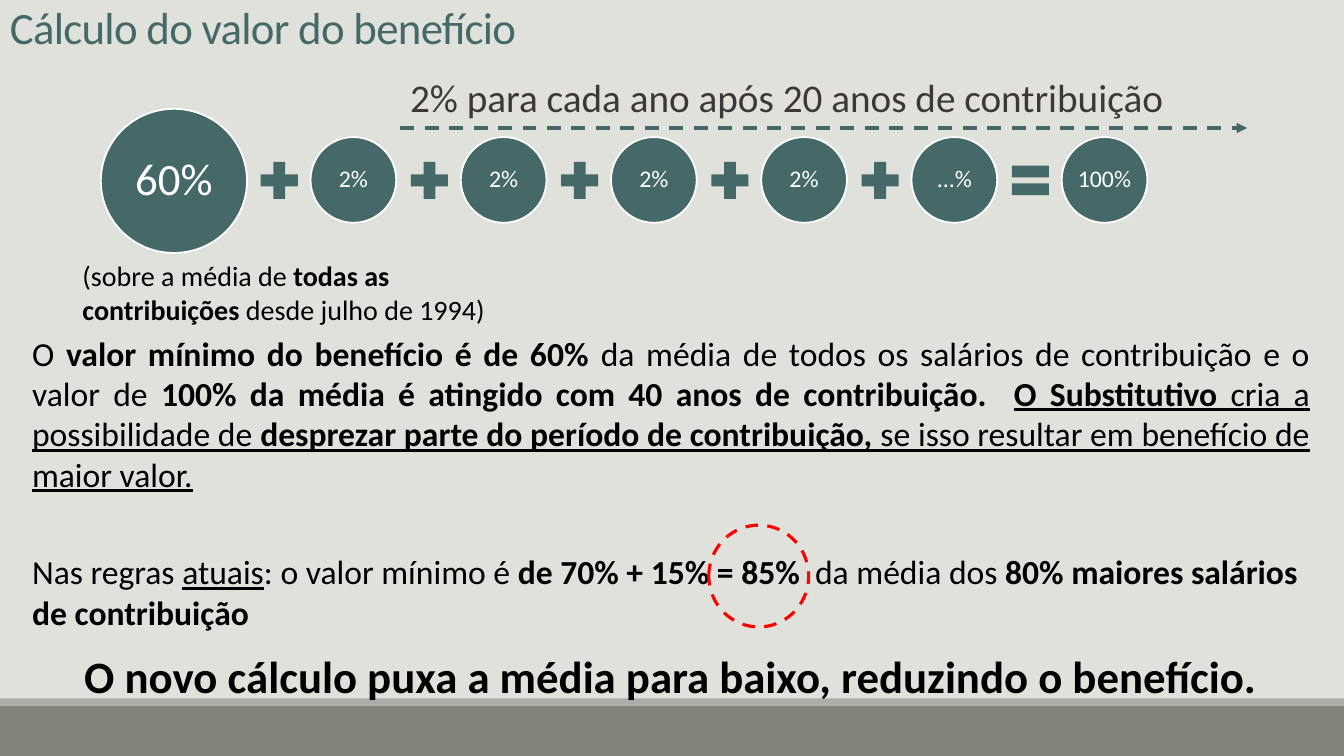
from lxml import etree
from pptx import Presentation
from pptx import util as u
from pptx.dml.color import RGBColor
from pptx.enum import dml, shapes, text
from pptx.oxml.ns import qn

EMU_PER_PX = 9144
FONT = "Calibri"
BACKGROUND = RGBColor(0xE1, 0xE1, 0xDB)
TEAL = RGBColor(0x45, 0x69, 0x68)
BROWN = RGBColor(0x3D, 0x37, 0x37)
FOOTER = RGBColor(0x82, 0x84, 0x7C)
FOOTER_EDGE = RGBColor(0xAC, 0xAD, 0xA8)
BLACK = RGBColor(0, 0, 0)
WHITE = RGBColor(0xFF, 0xFF, 0xFF)
RED = RGBColor(0xFF, 0, 0)
SHAPE = shapes.MSO_SHAPE
ALIGN = text.PP_ALIGN
ANCHOR = text.MSO_ANCHOR

AVERAGE_NOTE = [
    ("(sobre a média de ", {}),
    ("todas as contribuições ", {"bold": True}),
    ("desde julho de 1994)", {}),
]
NEW_RULE = [
    ("O ", {}),
    ("valor mínimo do benefício é de 60% ", {"bold": True}),
    ("da média de todos os salários de contribuição e o valor de ", {}),
    ("100% da média é atingido com 40 anos de contribuição.  ", {"bold": True}),
    ("O Substitutivo ", {"bold": True, "underline": True}),
    ("cria a possibilidade de ", {"underline": True}),
    ("desprezar parte do período de contribuição,", {"bold": True, "underline": True}),
    (" se isso resultar em benefício de maior valor.", {"underline": True}),
]
CURRENT_RULE = [
    ("Nas regras ", {}),
    ("atuais", {"underline": True}),
    (": o valor mínimo é ", {}),
    ("de 70% + 15% = 85%  ", {"bold": True}),
    ("da média dos ", {}),
    ("80% maiores salários de contribuição", {"bold": True}),
]
CONCLUSION = [
    ("O novo cálculo puxa a média para baixo, reduzindo o benefício.", {"bold": True}),
]


def px(*lengths):
    return [u.Emu(length * EMU_PER_PX) for length in lengths]


def set_values(target, values):
    for name, value in values.items():
        setattr(target, name, value)


def write_paragraph(paragraph, runs, size, color, **layout):
    set_values(paragraph, layout)
    for words, emphasis in runs:
        run = paragraph.add_run()
        run.text = words
        set_values(run.font, {"name": FONT, "size": u.Pt(size), **emphasis})
        run.font.color.rgb = color


def add_text_box(slide, box, anchor=ANCHOR.TOP):
    frame = slide.shapes.add_textbox(*px(*box)).text_frame
    set_values(frame, {"word_wrap": True, "vertical_anchor": anchor})
    return frame


def style_line(line, color, width, dash=None):
    line.color.rgb = color
    set_values(line, {"width": u.Pt(width), "dash_style": dash})


def add_shape(slide, kind, box, fill=None):
    shape = slide.shapes.add_shape(kind, *px(*box))
    shape.shadow.inherit = False
    if fill is None:
        shape.fill.background()
    else:
        shape.fill.solid()
        shape.fill.fore_color.rgb = fill
    shape.line.fill.background()
    return shape


def add_percent_circle(slide, box, label, size, inset):
    circle = add_shape(slide, SHAPE.OVAL, box, TEAL)
    style_line(circle.line, WHITE, 1.25)
    frame = circle.text_frame
    margins = ("margin_left", "margin_top", "margin_right", "margin_bottom")
    set_values(frame, dict.fromkeys(margins, px(inset)[0]))
    set_values(frame, {"word_wrap": True, "vertical_anchor": ANCHOR.MIDDLE})
    write_paragraph(frame.paragraphs[0], [(label, {})], size, WHITE,
                    alignment=ALIGN.CENTER, line_spacing=0.9)


def add_dashed_arrow(slide, start, end):
    arrow = slide.shapes.add_connector(shapes.MSO_CONNECTOR.STRAIGHT, *px(*start, *end))
    style_line(arrow.line, TEAL, 2.5, dml.MSO_LINE.DASH)
    etree.SubElement(arrow.line._get_or_add_ln(), qn("a:tailEnd"), type="triangle")
    etree.SubElement(arrow._element.spPr, qn("a:effectLst"))


def add_title(slide):
    paragraph = add_text_box(slide, (0, -15, 1250, 73), ANCHOR.BOTTOM).paragraphs[0]
    write_paragraph(paragraph, [("Cálculo do valor do benefício", {})], 32, TEAL,
                    line_spacing=0.85)
    paragraph.runs[0].font._element.set("spc", "-50")


def add_sum(slide):
    pitch = 149
    add_percent_circle(slide, (100, 108, 145, 143), "60%", 32, 4)
    for index, label in enumerate(["2%"] * 4 + ["...%", "100%"]):
        sign = SHAPE.MATH_EQUAL if label == "100%" else SHAPE.MATH_PLUS
        add_shape(slide, sign, (252 + index * pitch, 154, 50, 50), TEAL)
        add_percent_circle(slide, (308 + index * pitch, 136, 85, 85), label, 17, 2)


def add_rules(slide):
    frame = add_text_box(slide, (22, 325, 1287, 438))
    write_paragraph(frame.paragraphs[0], NEW_RULE, 24, BLACK, alignment=ALIGN.JUSTIFY)
    write_paragraph(frame.add_paragraph(), CURRENT_RULE, 24, BLACK,
                    space_before=u.Pt(41), space_after=u.Pt(12))
    write_paragraph(frame.add_paragraph(), CONCLUSION, 32, BLACK, alignment=ALIGN.CENTER)


def main():
    presentation = Presentation()
    width, height = px(1333, 750)
    set_values(presentation, {"slide_width": width, "slide_height": height})
    slide = presentation.slides.add_slide(presentation.slide_layouts[6])
    slide.background.fill.solid()
    slide.background.fill.fore_color.rgb = BACKGROUND

    add_shape(slide, SHAPE.RECTANGLE, (0, 700, 1333, 50), FOOTER)
    add_shape(slide, SHAPE.RECTANGLE, (0, 693, 1333, 7), FOOTER_EDGE)
    add_title(slide)
    heading = add_text_box(slide, (397, 68, 853, 57))
    write_paragraph(heading.paragraphs[0],
                    [("2% para cada ano após 20 anos de contribuição", {})], 28, BROWN)
    add_rules(slide)
    add_sum(slide)
    add_dashed_arrow(slide, (397, 127), (1237, 127))
    note = add_text_box(slide, (72, 252, 434, 77))
    write_paragraph(note.paragraphs[0], AVERAGE_NOTE, 20, BLACK)
    highlight = add_shape(slide, SHAPE.OVAL, (703, 521, 99, 101))
    style_line(highlight.line, RED, 2.25, dml.MSO_LINE.DASH)
    presentation.save("out.pptx")


if __name__ == "__main__":
    main()
